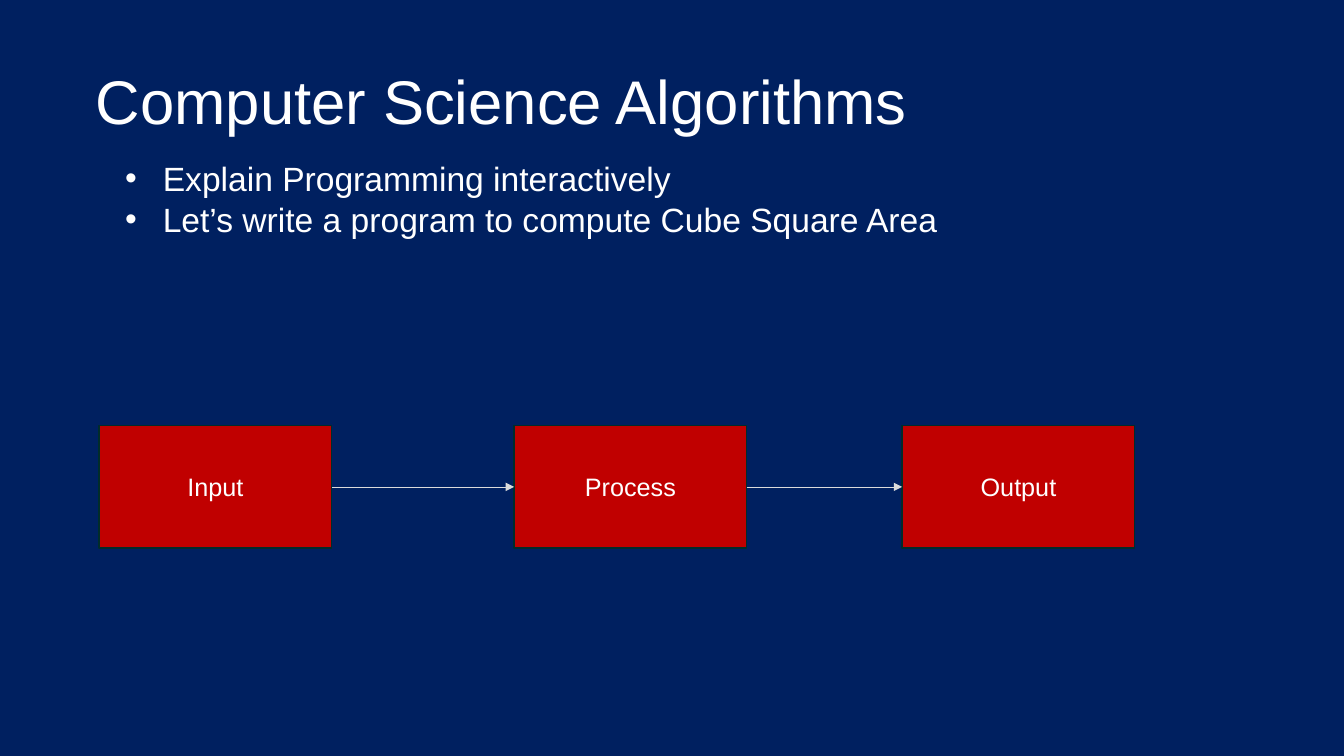
from pptx import Presentation
from pptx.dml.color import RGBColor
from pptx.enum.shapes import MSO_CONNECTOR as Conn, MSO_SHAPE as Shape
from pptx.enum.text import MSO_ANCHOR as Anchor, MSO_AUTO_SIZE as Fit, PP_ALIGN as Align
from pptx.oxml.ns import qn
from pptx.util import Pt
from lxml.etree import SubElement as Sub

NAVY = RGBColor(0x00, 0x20, 0x60)
RED = RGBColor(0xC0, 0x00, 0x00)
TEAL = RGBColor(0x00, 0x2C, 0x2B)
GREY = RGBColor(0xDA, 0xDA, 0xDA)
WHITE = RGBColor(0xFF, 0xFF, 0xFF)
FONT = "Arial"

ITEMS = ["Explain Programming interactively",
         "Let’s write a program to compute Cube Square Area"]
STEPS = [("Input", 70.8), ("Process", 367.2), ("Output", 644.4)]
TOP, WIDTH, HEIGHT = 304, 166.2, 87.6


def place(shape, left, top, width, height):
    shape.left, shape.top = Pt(left), Pt(top)
    shape.width, shape.height = Pt(width), Pt(height)


def write(shape, text, size, align, anchor):
    frame = shape.text_frame
    frame.text = text
    frame.word_wrap = True
    frame.auto_size = Fit.NONE
    frame.vertical_anchor = anchor
    for para in frame.paragraphs:
        para.alignment = align
        para.space_before = Pt(0)
        for run in para.runs:
            font = run.font
            font.name, font.size = FONT, Pt(size)
            font.color.rgb = WHITE


def add_title(slide, text):
    title = slide.shapes.title
    place(title, 61.2, 22.3, 828, 104.4)
    write(title, text, 44, Align.LEFT, Anchor.MIDDLE)
    title.text_frame.paragraphs[0].line_spacing = 0.9


def add_list(slide, items):
    body = slide.placeholders[1]
    place(body, 82.1, 109.4, 627, 94.3)
    write(body, "\n".join(items), 24, Align.LEFT, Anchor.TOP)
    for para in body.text_frame.paragraphs:
        props = para._p.get_or_add_pPr()
        props.set("marL", str(Pt(27)))
        props.set("indent", str(Pt(-27)))
        Sub(props, qn("a:buFont"), typeface=FONT)
        Sub(props, qn("a:buChar"), char="•")


def add_box(slide, text, left):
    box = slide.shapes.add_shape(Shape.RECTANGLE, Pt(left), Pt(TOP),
                                 Pt(WIDTH), Pt(HEIGHT))
    box.shadow.inherit = False
    box.fill.solid()
    box.fill.fore_color.rgb = RED
    box.line.color.rgb = TEAL
    box.line.width = Pt(1)
    write(box, text, 18, Align.CENTER, Anchor.MIDDLE)
    return box


def add_arrow(slide, start, end):
    mid = start.top + start.height // 2
    arrow = slide.shapes.add_connector(Conn.STRAIGHT, start.left + start.width,
                                       mid, end.left, mid)
    # Glue right side to left side
    arrow.begin_connect(start, 3)
    arrow.end_connect(end, 1)
    arrow.line.color.rgb = GREY
    arrow.line.width = Pt(0.5)
    props = arrow._element.spPr
    Sub(props.find(qn("a:ln")), qn("a:tailEnd"), type="triangle")
    Sub(props, qn("a:effectLst"))


def main():
    deck = Presentation()
    deck.slide_width, deck.slide_height = Pt(960), Pt(540)
    slide = deck.slides.add_slide(deck.slide_layouts[1])
    fill = slide.background.fill
    fill.solid()
    fill.fore_color.rgb = NAVY

    # Heading and list
    add_title(slide, "Computer Science Algorithms")
    add_list(slide, ITEMS)

    # Flow of steps
    boxes = [add_box(slide, text, left) for text, left in STEPS]
    for start, end in zip(boxes, boxes[1:]):
        add_arrow(slide, start, end)

    deck.save("out.pptx")


if __name__ == "__main__":
    main()
